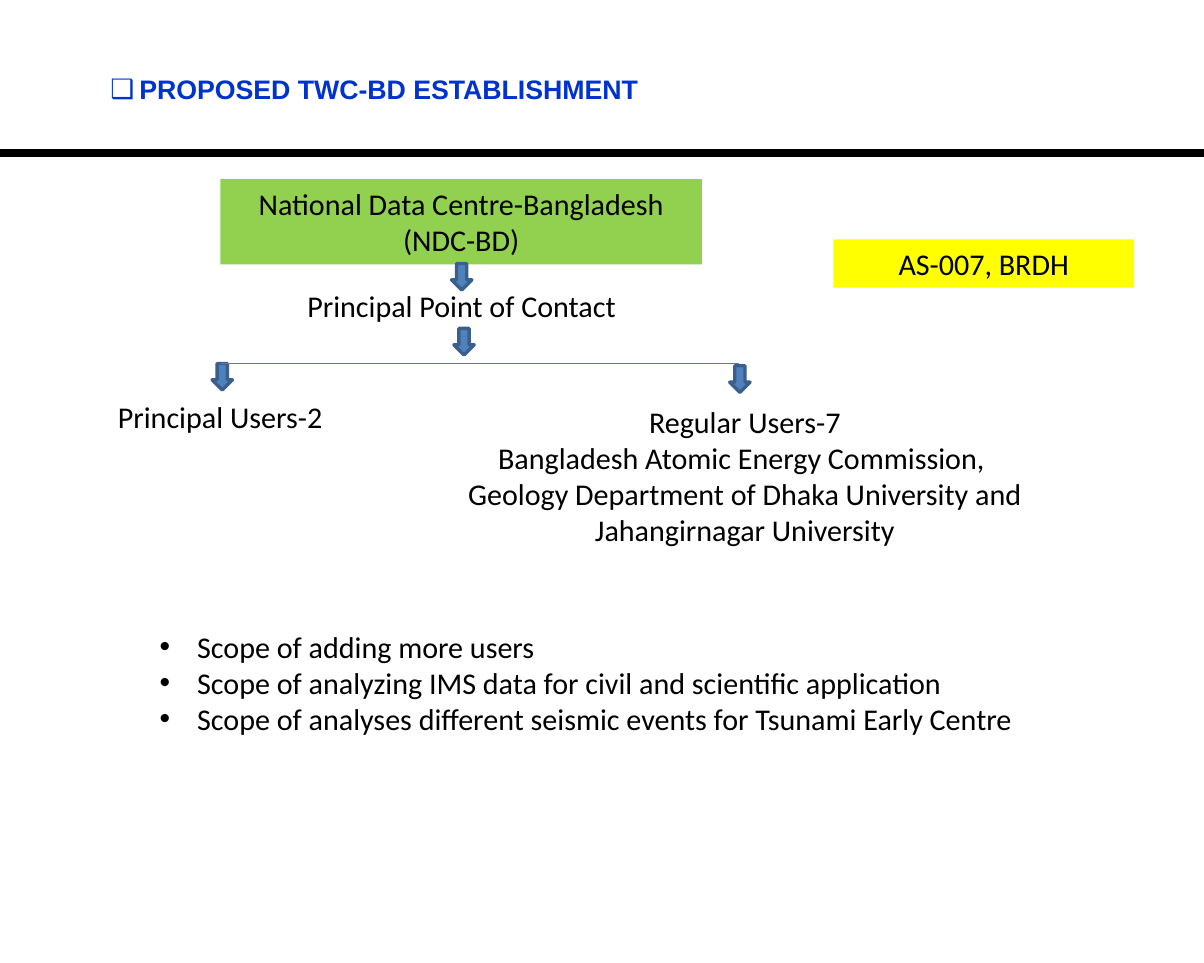
from lxml.etree import SubElement
from pptx import Presentation
from pptx.dml.color import RGBColor
from pptx.enum.shapes import MSO_CONNECTOR, MSO_SHAPE
from pptx.enum.text import MSO_ANCHOR, PP_ALIGN
from pptx.oxml.ns import qn
from pptx.util import Cm, Pt

SLIDE_WIDTH, SLIDE_HEIGHT = 25.4, 20.32
ARROW_WIDTH, ARROW_HEIGHT = 0.43, 0.56


def color(hex_code):
    return RGBColor.from_string(hex_code)


def set_bullet(paragraph, symbol, indent):
    properties = paragraph._p.get_or_add_pPr()
    properties.set("marL", str(Cm(indent)))
    properties.set("indent", str(-Cm(indent)))
    SubElement(properties, qn("a:buFont")).set("typeface", "Arial")
    SubElement(properties, qn("a:buChar")).set("char", symbol)


def add_text(slide, text, left, top, width, height, *, size=18, font="Calibri",
             ink="000000", bold=False, align=PP_ALIGN.CENTER, fill=None,
             bullet=None, indent=0):
    place = Cm(left), Cm(top), Cm(width), Cm(height)
    if fill:
        holder = slide.shapes.add_shape(MSO_SHAPE.RECTANGLE, *place)
        holder.shadow.inherit = False
        holder.fill.solid()
        holder.fill.fore_color.rgb = color(fill)
        holder.line.fill.background()
    else:
        holder = slide.shapes.add_textbox(*place)
    frame = holder.text_frame
    frame.word_wrap = True
    frame.vertical_anchor = MSO_ANCHOR.TOP
    frame.text = text
    for paragraph in frame.paragraphs:
        paragraph.alignment = align
        if bullet:
            set_bullet(paragraph, bullet, indent)
        for run in paragraph.runs:
            run.font.size = Pt(size)
            run.font.name = font
            run.font.bold = bold
            run.font.color.rgb = color(ink)
    return holder


def add_rule(slide, left, right, y, ink, weight):
    rule = slide.shapes.add_connector(
        MSO_CONNECTOR.STRAIGHT, Cm(left), Cm(y), Cm(right), Cm(y))
    rule.line.color.rgb = color(ink)
    rule.line.width = Pt(weight)
    SubElement(rule._element.spPr, qn("a:effectLst"))


def add_down_arrow(slide, center, top):
    arrow = slide.shapes.add_shape(
        MSO_SHAPE.DOWN_ARROW, Cm(center - ARROW_WIDTH / 2), Cm(top),
        Cm(ARROW_WIDTH), Cm(ARROW_HEIGHT))
    arrow.shadow.inherit = False
    arrow.fill.solid()
    arrow.fill.fore_color.rgb = color("4F81BD")
    arrow.line.color.rgb = color("3A5F8C")
    arrow.line.width = Pt(2)


def add_header(slide, left, top, width, height):
    add_rule(slide, left, left + width, top + height, "000000", 4.5)
    add_text(slide, "PROPOSED TWC-BD ESTABLISHMENT", left + 2.08, top + 1.42,
             14, 0.94, size=16, font="Arial", ink="0033CC", bold=True,
             align=PP_ALIGN.LEFT, bullet="❑", indent=0.61)


def add_organisation(slide, left, top, width, height):
    add_text(slide, "National Data Centre-Bangladesh (NDC-BD)",
             left + 3.18, top, 10.16, 1.8, fill="92D050")
    add_text(slide, "Principal Point of Contact", left + 4.14, top + 2.16, 8.26, 1.02)
    add_text(slide, "Principal Users-2", left, top + 4.5, 6.35, 1.02)
    regular_users = ("Regular Users-7\n"
                     "Bangladesh Atomic Energy Commission, \n"
                     "Geology Department of Dhaka University and Jahangirnagar University")
    add_text(slide, regular_users, left + 8.11, top + height - 4.11, 12.27, 4.11)
    add_text(slide, "AS-007, BRDH", left + width - 6.35, top + 1.27, 6.35, 1.02,
             fill="FFFF00")
    for center, arrow_top in ((8.27, 1.78), (3.22, 3.89), (14.14, 3.94), (8.32, 3.15)):
        add_down_arrow(slide, left + center, top + arrow_top)
    add_rule(slide, left + 3.2, left + 14.13, top + 3.89, "4B7EBC", 0.75)


def add_scope(slide, left, top, width, height):
    scopes = ("Scope of adding more users",
              "Scope of analyzing IMS data for civil and scientific application",
              "Scope of analyses different seismic events for Tsunami Early Centre")
    add_text(slide, "\n".join(scopes), left, top, width, height,
             align=PP_ALIGN.LEFT, bullet="•", indent=0.79)


def main():
    deck = Presentation()
    deck.slide_width, deck.slide_height = Cm(SLIDE_WIDTH), Cm(SLIDE_HEIGHT)
    slide = deck.slides.add_slide(deck.slide_layouts[6])
    add_header(slide, 0, 0, SLIDE_WIDTH, 3.23)
    add_organisation(slide, 1.47, 3.78, 22.46, 8.71)
    add_scope(slide, 3.12, 13.13, 18.72, 2.57)
    deck.save("out.pptx")


if __name__ == "__main__":
    main()
